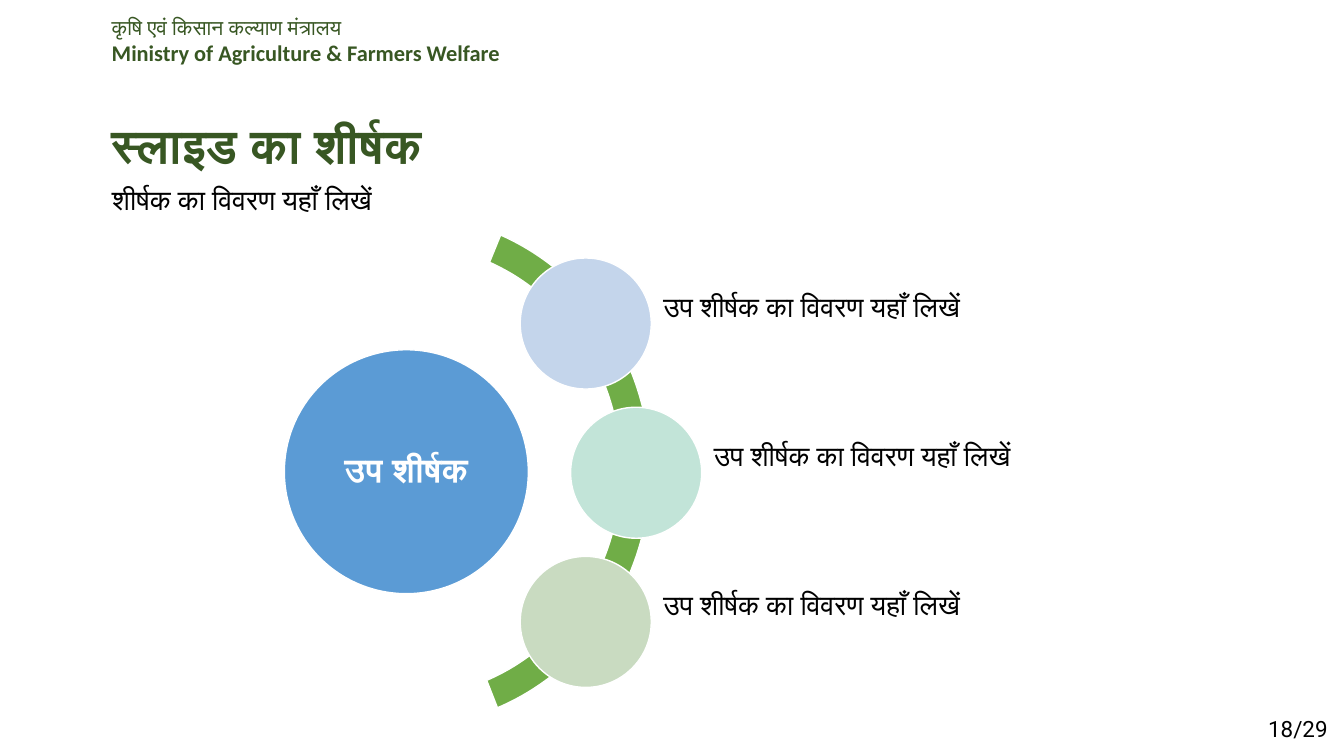
from lxml import etree
from pptx import Presentation
from pptx.dml.color import RGBColor
from pptx.enum.shapes import MSO_SHAPE
from pptx.enum.text import MSO_ANCHOR, MSO_AUTO_SIZE, PP_ALIGN
from pptx.oxml.ns import qn
from pptx.util import Inches, Pt

ELLIPSE, BLOCK_ARC = MSO_SHAPE.OVAL, MSO_SHAPE.BLOCK_ARC
TOP, MIDDLE = MSO_ANCHOR.TOP, MSO_ANCHOR.MIDDLE
LEFT, CENTER = PP_ALIGN.LEFT, PP_ALIGN.CENTER
NO_AUTOFIT = MSO_AUTO_SIZE.NONE
COLORS = {
    "heading": "385723", "text": "000000", "white": "FFFFFF",
    "hub": "5B9BD5", "arc": "70AD47",
    "blue": "C4D5EB", "mint": "C2E4D8", "sage": "C9DBC1",
}
DETAIL = "उप शीर्षक का विवरण यहाँ लिखें"
# Fill and rightward shift of each satellite circle, top to bottom
SATELLITES = [("blue", 0), ("mint", 0.5), ("sage", 0)]


def color(name):
    return RGBColor.from_string(COLORS[name])


def format_paragraph(para, size, font, shade, bold=False, align=LEFT, spacing=0.9):
    para.alignment = align
    para.line_spacing = spacing
    para.space_before = para.space_after = Pt(0)
    for span in para.runs:
        span.font.size = Pt(size)
        span.font.name = font
        span.font.bold = bold
        span.font.color.rgb = color(shade)


def add_text(page, box, lines, anchor=TOP, inset=None, **style):
    """Place one paragraph per (text, size, font, shade, bold) line in the box."""
    frame = page.shapes.add_textbox(*map(Inches, box)).text_frame
    frame.word_wrap = True
    frame.vertical_anchor = anchor
    if inset is not None:
        frame.margin_left = frame.margin_right = Inches(inset)
        frame.margin_top = frame.margin_bottom = Inches(inset)
    frame.text = "\n".join(line[0] for line in lines)
    for para, line in zip(frame.paragraphs, lines):
        format_paragraph(para, *line[1:], **style)


def add_figure(page, kind, box, fill):
    figure = page.shapes.add_shape(kind, *map(Inches, box))
    figure.shadow.inherit = False
    figure.fill.solid()
    figure.fill.fore_color.rgb = color(fill)
    figure.line.color.rgb = color("white")
    figure.line.width = Pt(1)
    return figure


def fill_placeholder(holder, box, text, *style):
    holder.left, holder.top, holder.width, holder.height = map(Inches, box)
    frame = holder.text_frame
    frame.auto_size = NO_AUTOFIT
    frame.word_wrap = True
    frame.vertical_anchor = TOP
    frame.text = text
    para = frame.paragraphs[0]
    properties = para._p.get_or_add_pPr()
    properties.set("marL", "0")
    properties.set("indent", "0")
    etree.SubElement(properties, qn("a:buNone"))
    format_paragraph(para, *style)


def build_header(page, left):
    add_text(page, (left, 0.09, 6.09, 0.62), [
        ("कृषि एवं किसान कल्याण मंत्रालय", 15, "Roboto", "heading", False),
        ("Ministry of Agriculture & Farmers Welfare", 16, "Calibri", "heading", True),
    ], spacing=1.0)
    fill_placeholder(page.shapes.title, (left, 1.16, 6.13, 0.47),
                     "स्लाइड का शीर्षक", 34, "Roboto", "heading", True)
    fill_placeholder(page.placeholders[1], (left, 1.8, 7.19, 0.37),
                     "शीर्षक का विवरण यहाँ लिखें", 20, "Calibri", "text")


def build_radial_diagram(page, left, top):
    """Hub circle, arc and three labelled satellites, from the arc's corner."""
    hub, satellite, pitch = 2.42, 1.3, 1.48
    hub_box = (left + 1.24, top + 1.34, hub, hub)
    add_figure(page, ELLIPSE, hub_box, "hub")
    margin = 0.36
    add_text(page, (hub_box[0] + margin, hub_box[1] + margin,
                    hub - 2 * margin, hub - 2 * margin),
             [("उप शीर्षक", 24, "Calibri", "white", True)],
             MIDDLE, 0.03, align=CENTER)

    arc = add_figure(page, BLOCK_ARC, (left, top, 4.87, 5.08), "arc")
    for index, value in enumerate((175.28, 41.19, 0.06)):
        arc.adjustments[index] = value

    for row, (fill, shift) in enumerate(SATELLITES):
        x, y = left + 3.58 + shift, top + 0.43 + row * pitch
        add_figure(page, ELLIPSE, (x, y, satellite, satellite), fill)
        add_text(page, (x + satellite + 0.09, y + 0.22, 4.15, 0.55),
                 [(DETAIL, 20, "Calibri", "text")], MIDDLE, 0.03)


def main():
    deck = Presentation()
    deck.slide_width, deck.slide_height = Inches(13.33), Inches(7.5)
    page = deck.slides.add_slide(deck.slide_layouts[1])
    page.background.fill.solid()
    page.background.fill.fore_color.rgb = color("white")
    build_header(page, 1.01)
    build_radial_diagram(page, 1.58, 2.13)
    add_text(page, (12.48, 7.05, 0.86, 0.37),
             [("18/29", 16, "Roboto", "text")], spacing=1.0)
    deck.save("out.pptx")


if __name__ == "__main__":
    main()
